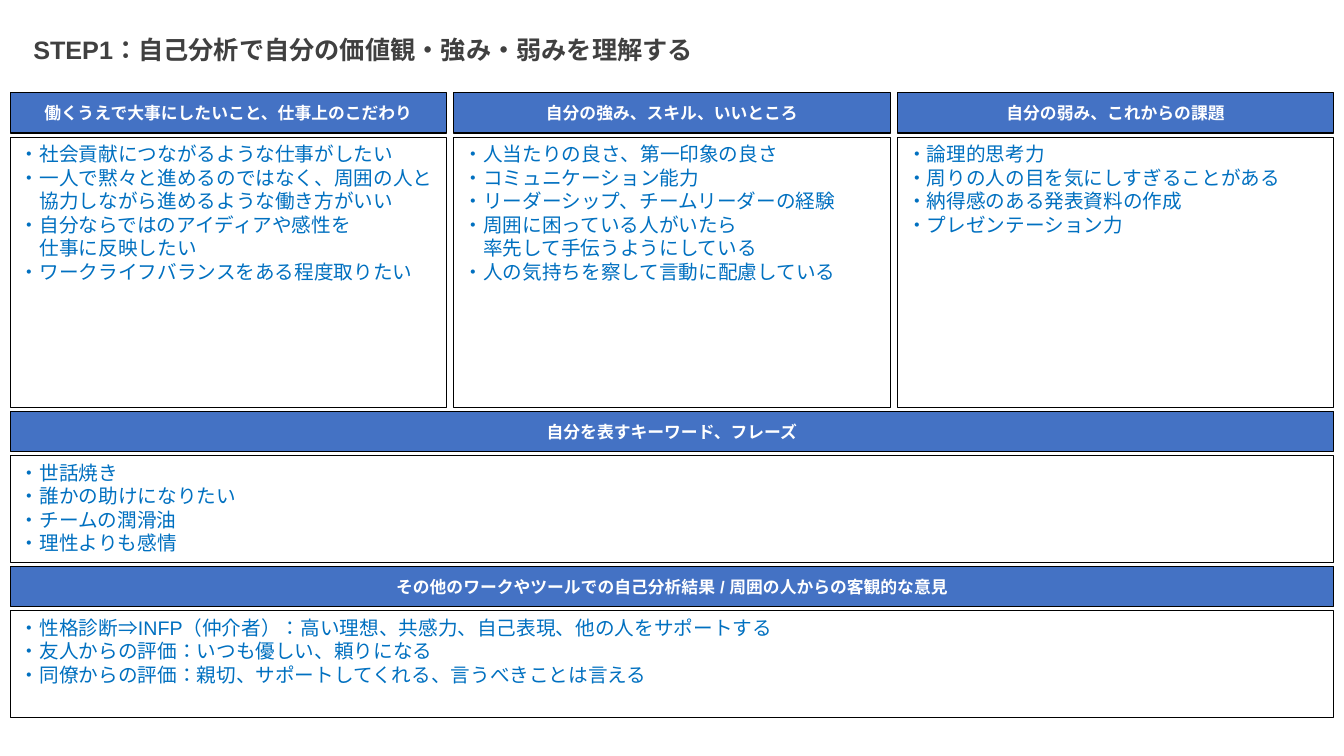
from lxml import etree
from pptx import Presentation
from pptx.dml.color import RGBColor
from pptx.enum.lang import MSO_LANGUAGE_ID
from pptx.enum.shapes import MSO_SHAPE
from pptx.enum.text import MSO_ANCHOR, MSO_AUTO_SIZE, PP_ALIGN
from pptx.oxml.ns import qn
from pptx.util import Inches, Pt

RECTANGLE = MSO_SHAPE.RECTANGLE
TOP, MIDDLE = MSO_ANCHOR.TOP, MSO_ANCHOR.MIDDLE
LEFT, CENTER = PP_ALIGN.LEFT, PP_ALIGN.CENTER
NO_AUTOFIT = MSO_AUTO_SIZE.NONE
JAPANESE = MSO_LANGUAGE_ID.JAPANESE

FONT = "Arial"
COLORS = {
    "title": "404040",
    "header": "4472C4",
    "header_text": "FFFFFF",
    "body": "FFFFFF",
    "body_text": "0070C0",
    "border": "000000",
}

TITLE = "STEP1：自己分析で自分の価値観・強み・弱みを理解する"

# Each band: body height, then its sections as (heading, lines)
BANDS = [
    (2.68, [
        ("働くうえで大事にしたいこと、仕事上のこだわり", [
            "・社会貢献につながるような仕事がしたい",
            "・一人で黙々と進めるのではなく、周囲の人と",
            "　協力しながら進めるような働き方がいい",
            "・自分ならではのアイディアや感性を",
            "　仕事に反映したい",
            "・ワークライフバランスをある程度取りたい",
        ]),
        ("自分の強み、スキル、いいところ", [
            "・人当たりの良さ、第一印象の良さ",
            "・コミュニケーション能力",
            "・リーダーシップ、チームリーダーの経験",
            "・周囲に困っている人がいたら",
            "　率先して手伝うようにしている",
            "・人の気持ちを察して言動に配慮している",
        ]),
        ("自分の弱み、これからの課題", [
            "・論理的思考力",
            "・周りの人の目を気にしすぎることがある",
            "・納得感のある発表資料の作成",
            "・プレゼンテーション力",
        ]),
    ]),
    (1.06, [
        ("自分を表すキーワード、フレーズ", [
            "・世話焼き",
            "・誰かの助けになりたい",
            "・チームの潤滑油",
            "・理性よりも感情",
        ]),
    ]),
    (1.06, [
        ("その他のワークやツールでの自己分析結果 / 周囲の人からの客観的な意見", [
            "・性格診断⇒INFP（仲介者）：高い理想、共感力、自己表現、他の人をサポートする",
            "・友人からの評価：いつも優しい、頼りになる",
            "・同僚からの評価：親切、サポートしてくれる、言うべきことは言える",
        ]),
    ]),
]

MARGIN, BANDS_TOP, BANDS_WIDTH = 0.1, 0.92, 13.13
HEADER_HEIGHT, ROW_GAP, COLUMN_GAP = 0.4, 0.04, 0.07


def color(name):
    return RGBColor.from_string(COLORS[name])


def write_lines(frame, lines, size, color_name, align, bold=False):
    for index, line in enumerate(lines):
        paragraph = frame.add_paragraph() if index else frame.paragraphs[0]
        paragraph.alignment = align
        run = paragraph.add_run()
        run.text = line
        font = run.font
        font.name, font.size, font.bold = FONT, Pt(size), bold
        font.color.rgb = color(color_name)
        font.language_id = JAPANESE
        # East Asian characters take their typeface from a:ea
        east_asian = etree.SubElement(font._element, qn("a:ea"))
        east_asian.set("typeface", FONT)


def add_box(slide, left, top, width, height, fill):
    box = slide.shapes.add_shape(
        RECTANGLE, Inches(left), Inches(top), Inches(width), Inches(height))
    box.shadow.inherit = False
    box.fill.solid()
    box.fill.fore_color.rgb = color(fill)
    box.line.color.rgb = color("border")
    box.line.width = Pt(0.75)
    return box.text_frame


def add_section(slide, left, top, width, body_height, heading, lines):
    header = add_box(slide, left, top, width, HEADER_HEIGHT, "header")
    header.word_wrap = False
    header.vertical_anchor = MIDDLE
    write_lines(header, [heading], 12, "header_text", CENTER, bold=True)

    body_top = top + HEADER_HEIGHT + ROW_GAP
    body = add_box(slide, left, body_top, width, body_height, "body")
    body.word_wrap = True
    body.vertical_anchor = TOP
    write_lines(body, lines, 14, "body_text", LEFT)


def add_title(slide):
    title = slide.shapes.title
    title.left, title.top = Inches(0.23), Inches(0.29)
    title.width, title.height = Inches(7.86), Inches(0.4)
    frame = title.text_frame
    frame.word_wrap = True
    frame.auto_size = NO_AUTOFIT
    frame.vertical_anchor = TOP
    write_lines(frame, [TITLE], 18, "title", LEFT, bold=True)


def main():
    deck = Presentation()
    deck.slide_width, deck.slide_height = Inches(13.33), Inches(7.5)
    slide = deck.slides.add_slide(deck.slide_layouts.get_by_name("Title Only"))
    add_title(slide)

    top = BANDS_TOP
    for body_height, sections in BANDS:
        count = len(sections)
        width = (BANDS_WIDTH - COLUMN_GAP * (count - 1)) / count
        for column, (heading, lines) in enumerate(sections):
            left = MARGIN + column * (width + COLUMN_GAP)
            add_section(slide, left, top, width, body_height, heading, lines)
        top += HEADER_HEIGHT + body_height + 2 * ROW_GAP

    deck.save("out.pptx")


if __name__ == "__main__":
    main()
